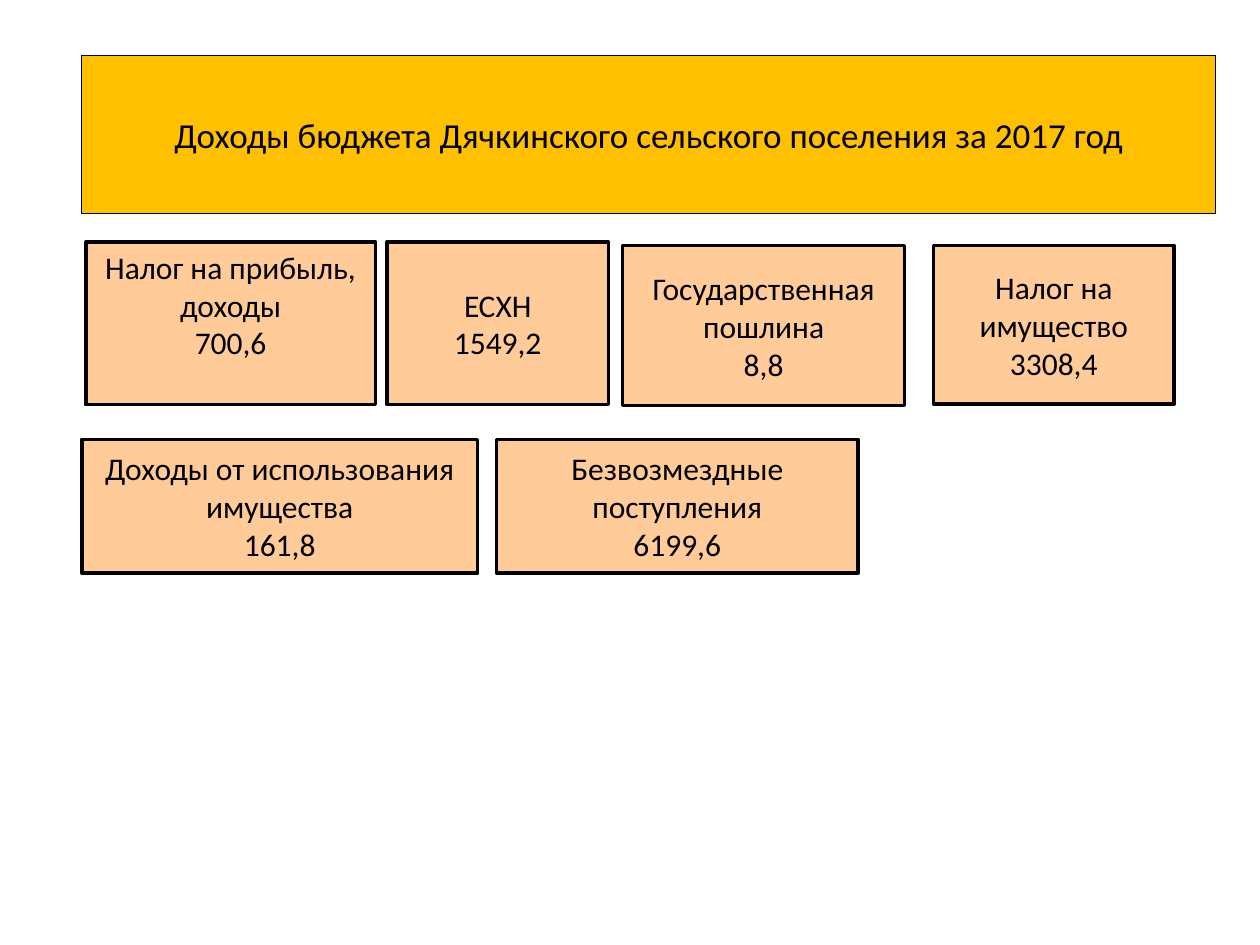
from pptx import Presentation
from pptx.dml.color import RGBColor
from pptx.enum.shapes import MSO_SHAPE
from pptx.enum.text import MSO_ANCHOR, PP_ALIGN
from pptx.util import Cm, Pt


def paint(code):
    return RGBColor.from_string(code)


class Board:
    """Holds the style and the current slide."""
    font = {"name": "Calibri", "bold": False}
    frame = {"word_wrap": True, "vertical_anchor": MSO_ANCHOR.MIDDLE,
             "margin_left": Cm(0.25), "margin_right": Cm(0.25),
             "margin_top": Cm(0.13), "margin_bottom": Cm(0.13)}
    ink = "000000"

    def __init__(self, slide):
        self.slide = slide

    def apply(self, item, values):
        for key, value in values.items():
            setattr(item, key, value)

    def box(self, place, lines, fill, size, edge, **extra):
        shape = self.slide.shapes.add_shape(
            MSO_SHAPE.RECTANGLE, *(Cm(n) for n in place))
        shape.shadow.inherit = False
        shape.fill.solid()
        shape.fill.fore_color.rgb = paint(fill)
        shape.line.color.rgb = paint(self.ink)
        shape.line.width = Pt(edge)
        text = shape.text_frame
        self.apply(text, {**self.frame, **extra})
        text.text = "\n".join(lines)
        for para in text.paragraphs:
            para.alignment = PP_ALIGN.CENTER
            for run in para.runs:
                self.apply(run.font, {**self.font, "size": Pt(size)})
                run.font.color.rgb = paint(self.ink)

    def title(self, place, words):
        self.box(place, [words], "FFC000", 20, 0.75)

    def card(self, place, name, value, **extra):
        self.box(place, [name, value], "FFCC99", 18, 2, **extra)


def main():
    deck = Presentation()
    deck.slide_width, deck.slide_height = Cm(25.4), Cm(19.05)
    board = Board(deck.slides.add_slide(deck.slide_layouts[6]))

    # Heading
    board.title((1.65, 1.12, 22.86, 3.18),
                "Доходы бюджета Дячкинского сельского поселения за 2017 год")

    # Tax income; the first card's text sits half a line higher
    board.card((1.73, 4.88, 5.84, 3.28), "Налог на прибыль, доходы", "700,6",
               margin_bottom=Cm(0.89))
    board.card((7.8, 4.88, 4.47, 3.28), "ЕСХН", "1549,2")
    board.card((12.55, 4.95, 5.69, 3.23), "Государственная пошлина", "8,8")
    board.card((18.82, 4.95, 4.85, 3.2), "Налог на имущество", "3308,4")

    # Other income
    board.card((1.65, 8.86, 7.98, 2.69),
               "Доходы от использования имущества", "161,8")
    board.card((10.01, 8.86, 7.29, 2.69), "Безвозмездные поступления", "6199,6")

    deck.save("out.pptx")


if __name__ == "__main__":
    main()
